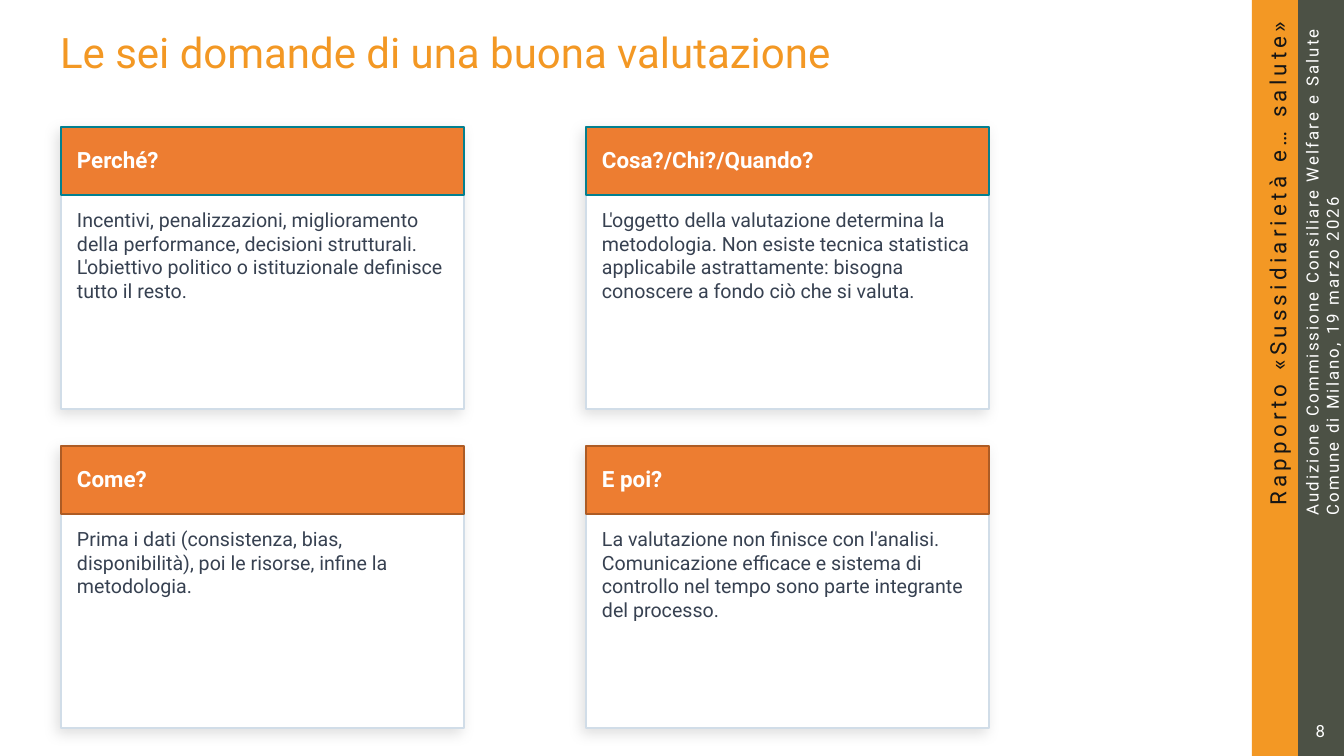
from lxml import etree
from pptx import Presentation
from pptx import util as u
from pptx.dml.color import RGBColor
from pptx.enum import shapes, text
from pptx.oxml import ns

EMU_PER_PX = 914400 / 100.8
FONT = "Roboto"
COLORS = {
    "amber": "F39824",
    "olive": "4C5145",
    "ink": "151515",
    "white": "FFFFFF",
    "orange": "ED7D31",
    "teal": "028090",
    "rust": "AD5B24",
    "border": "D1DDE8",
    "slate": "374151",
    "black": "000000",
}
LEFT, MIDDLE = text.PP_ALIGN.LEFT, text.MSO_ANCHOR.MIDDLE
RIGHT, TOP = text.PP_ALIGN.RIGHT, text.MSO_ANCHOR.TOP

# Cards: question, answer
QUESTIONS = [
    ("Perché?",
     "Incentivi, penalizzazioni, miglioramento della performance, decisioni "
     "strutturali. L'obiettivo politico o istituzionale definisce tutto il resto."),
    ("Cosa?/Chi?/Quando?",
     "L'oggetto della valutazione determina la metodologia. Non esiste tecnica "
     "statistica applicabile astrattamente: bisogna conoscere a fondo ciò che si valuta."),
    ("Come?",
     "Prima i dati (consistenza, bias, disponibilità), poi le risorse, "
     "infine la metodologia."),
    ("E poi?",
     "La valutazione non finisce con l'analisi. Comunicazione efficace e sistema "
     "di controllo nel tempo sono parte integrante del processo."),
]
HEADER_LINES = [("teal", 1), ("rust", 2)]  # one per row of cards
CARD_LEFT, CARD_TOP = 61, 127
CARD_STEP_X, CARD_STEP_Y = 525, 319
CARD_W, CARD_H, HEADER_H, PADDING = 403, 282, 68, 16


def px(value):
    return u.Emu(round(value * EMU_PER_PX))


def rgb(name):
    return RGBColor.from_string(COLORS[name])


def place(item, box):
    item.left, item.top, item.width, item.height = map(px, box)


def write(frame, lines, size, color, bold=False, align=LEFT, anchor=TOP,
          spacing=0, inset=0, wrap=True):
    frame.word_wrap = wrap
    frame.auto_size = text.MSO_AUTO_SIZE.NONE
    frame.vertical_anchor = anchor
    frame.margin_left = frame.margin_right = px(inset)
    frame.margin_top = frame.margin_bottom = px(inset)
    for i, line in enumerate(lines):
        paragraph = frame.paragraphs[0] if i == 0 else frame.add_paragraph()
        paragraph.alignment = align
        run = paragraph.add_run()
        run.text = line
        run.font.name, run.font.size, run.font.bold = FONT, u.Pt(size), bold
        run.font.color.rgb = rgb(color)
        if spacing:
            run.font._element.set("spc", str(round(spacing * 100)))


def add_text(slide, box, lines, size, color, rotation=0, **style):
    label = slide.shapes.add_textbox(*map(px, box))
    label.rotation = rotation
    write(label.text_frame, lines, size, color, **style)


def add_panel(slide, box, fill, line=None, line_width=1):
    panel = slide.shapes.add_shape(shapes.MSO_SHAPE.RECTANGLE, *map(px, box))
    panel.shadow.inherit = False
    panel.fill.solid()
    panel.fill.fore_color.rgb = rgb(fill)
    if line:
        panel.line.color.rgb = rgb(line)
        panel.line.width = u.Pt(line_width)
    else:
        panel.line.fill.background()
    return panel


def add_soft_shadow(panel):
    effects = panel._element.spPr.find(ns.qn("a:effectLst"))
    shadow = etree.SubElement(
        effects, ns.qn("a:outerShdw"), blurRad=str(u.Pt(10)), dist=str(u.Pt(4)),
        dir=str(135 * 60000), algn="bl", rotWithShape="0")
    color = etree.SubElement(shadow, ns.qn("a:srgbClr"), val=COLORS["black"])
    etree.SubElement(color, ns.qn("a:alpha"), val="12000")


def add_card(slide, left, top, question, answer, line, line_width):
    add_soft_shadow(add_panel(slide, (left, top, CARD_W, CARD_H), "white", "border"))
    add_panel(slide, (left, top, CARD_W, HEADER_H), "orange", line, line_width)
    inner_left, inner_w = left + PADDING, CARD_W - 2 * PADDING
    add_text(slide, (inner_left, top + 20, inner_w, 26), [question], 16, "white",
             bold=True, anchor=MIDDLE)
    add_text(slide, (inner_left, top + 81, inner_w, 95), [answer], 14, "slate")


def add_sidebar(slide):
    add_panel(slide, (1252, 0, 46, 756), "amber")
    add_panel(slide, (1298, 0, 46, 756), "olive")
    add_text(slide, (947, 339, 661, 26), ["Rapporto «Sussidiarietà e… salute»"],
             16, "ink", rotation=270, align=RIGHT, anchor=MIDDLE, spacing=3)
    add_text(slide, (1022, 196, 600, 39),
             ["Audizione Commissione Consiliare Welfare e Salute",
              "Comune di Milano, 19 marzo 2026"],
             12, "white", rotation=270, anchor=MIDDLE, spacing=1.5)
    add_text(slide, (1309, 716, 21, 29), ["8"], 12, "white",
             align=RIGHT, anchor=MIDDLE, inset=5, wrap=False)


def main():
    deck = Presentation()
    deck.slide_width, deck.slide_height = px(1344), px(756)
    slide = deck.slides.add_slide(deck.slide_layouts[5])

    # Sidebar and title
    add_sidebar(slide)
    title = slide.shapes.title
    place(title, (60, -43, 1049, 190))
    write(title.text_frame, ["Le sei domande di una buona valutazione"], 30, "amber",
          anchor=MIDDLE)

    # Two-by-two grid of questions
    for i, (question, answer) in enumerate(QUESTIONS):
        row, column = divmod(i, 2)
        add_card(slide, CARD_LEFT + column * CARD_STEP_X, CARD_TOP + row * CARD_STEP_Y,
                 question, answer, *HEADER_LINES[row])

    deck.save("out.pptx")


if __name__ == "__main__":
    main()
